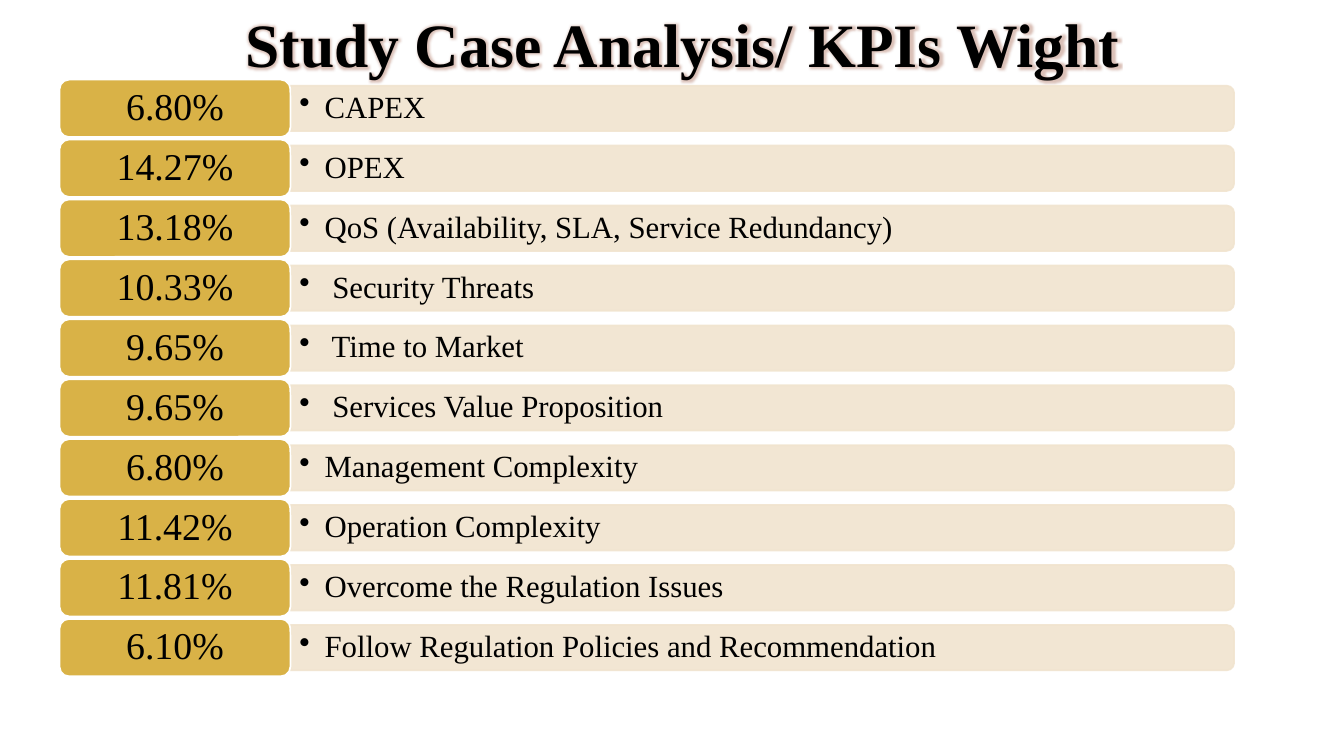
from lxml.etree import SubElement
from pptx import Presentation
from pptx.dml.color import RGBColor
from pptx.enum.shapes import MSO_SHAPE
from pptx.enum.text import MSO_ANCHOR, PP_ALIGN
from pptx.oxml import parse_xml
from pptx.oxml.ns import nsdecls, qn
from pptx.util import Inches, Pt

COLORS = {
    "weight": "D9B247",
    "bar": "F1E4CF",
    "white": "FFFFFF",
    "text": "000000",
    "glow": "A5644E",
}
FONT_NAME = "Times New Roman"
KPIS = [
    ("6.80%", "CAPEX"),
    ("14.27%", "OPEX"),
    ("13.18%", "QoS (Availability, SLA, Service Redundancy)"),
    ("10.33%", " Security Threats"),
    ("9.65%", " Time to Market"),
    ("9.65%", " Services Value Proposition"),
    ("6.80%", "Management Complexity"),
    ("11.42%", "Operation Complexity"),
    ("11.81%", "Overcome the Regulation Issues"),
    ("6.10%", "Follow Regulation Policies and Recommendation"),
]
FIRST_TOP, LAST_TOP = 0.79, 6.14
ROW_PITCH = (LAST_TOP - FIRST_TOP) / (len(KPIS) - 1)
WEIGHT_LEFT, WEIGHT_WIDTH, WEIGHT_HEIGHT = 0.59, 2.29, 0.57
BAR_LEFT, BAR_LENGTH, BAR_THICKNESS = 2.88, 9.36, 0.45


class KpiSlide:
    """Holds the style and the current slide."""

    def __init__(self, slide):
        """Keep the slide that receives the elements."""
        self.slide = slide

    def style_text(self, paragraph, size, bold=False):
        """Set the font of a paragraph."""
        font = paragraph.font
        font.name = FONT_NAME
        font.size = Pt(size)
        font.bold = bold
        font.color.rgb = RGBColor.from_string(COLORS["text"])

    def add_block(self, kind, left, top, width, height, fill, line):
        """Add a filled preset shape without shadow."""
        shape = self.slide.shapes.add_shape(
            kind, Inches(left), Inches(top), Inches(width), Inches(height))
        shape.shadow.inherit = False
        shape.fill.solid()
        shape.fill.fore_color.rgb = RGBColor.from_string(COLORS[fill])
        shape.line.color.rgb = RGBColor.from_string(COLORS[line])
        shape.line.width = Pt(1.25)
        return shape

    def add_bar(self, middle):
        """Add a translucent bar with rounded right corners."""
        shape = self.add_block(
            MSO_SHAPE.ROUND_2_SAME_RECTANGLE,
            BAR_LEFT + (BAR_LENGTH - BAR_THICKNESS) / 2, middle - BAR_LENGTH / 2,
            BAR_THICKNESS, BAR_LENGTH, "bar", "bar")
        shape.rotation = 90
        for color in shape._element.spPr.iter(qn("a:srgbClr")):
            SubElement(color, qn("a:alpha"), val="90000")

    def add_label(self, text, middle):
        """Add the bulleted name of a KPI."""
        height = 0.41
        box = self.slide.shapes.add_textbox(
            Inches(BAR_LEFT), Inches(middle - height / 2), Inches(9.34), Inches(height))
        frame = box.text_frame
        frame.word_wrap = True
        frame.vertical_anchor = MSO_ANCHOR.MIDDLE
        frame.margin_left = frame.margin_right = Inches(0.09)
        paragraph = frame.paragraphs[0]
        paragraph.text = text
        paragraph.level = 1
        paragraph.line_spacing = 0.9
        properties = paragraph._p.get_or_add_pPr()
        properties.set("marL", str(Inches(0.25)))
        properties.set("indent", str(Inches(-0.25)))
        SubElement(properties, qn("a:buChar"), char="•")
        self.style_text(paragraph, 22)

    def add_weight(self, text, top):
        """Add the rounded box with the weight of a KPI."""
        shape = self.add_block(
            MSO_SHAPE.ROUNDED_RECTANGLE, WEIGHT_LEFT, top,
            WEIGHT_WIDTH, WEIGHT_HEIGHT, "weight", "white")
        frame = shape.text_frame
        frame.vertical_anchor = MSO_ANCHOR.MIDDLE
        paragraph = frame.paragraphs[0]
        paragraph.text = text
        paragraph.alignment = PP_ALIGN.CENTER
        paragraph.line_spacing = 0.9
        self.style_text(paragraph, 27)

    def add_title(self, text):
        """Fill the title placeholder and bring it to the front."""
        title = self.slide.shapes.title
        title.left, title.top = Inches(0.11), Inches(0.01)
        title.width, title.height = Inches(13.33), Inches(0.84)
        frame = title.text_frame
        frame.word_wrap = True
        frame.vertical_anchor = MSO_ANCHOR.TOP
        paragraph = frame.paragraphs[0]
        paragraph.text = text
        paragraph.alignment = PP_ALIGN.CENTER
        self.style_text(paragraph, 44, bold=True)
        properties = paragraph.runs[0]._r.get_or_add_rPr()
        properties.append(parse_xml(
            f'<a:ln {nsdecls("a")} w="{Pt(0.75)}"><a:solidFill>'
            f'<a:srgbClr val="{COLORS["white"]}"/></a:solidFill></a:ln>'))
        properties.append(parse_xml(
            f'<a:solidFill {nsdecls("a")}><a:srgbClr val="{COLORS["text"]}"/></a:solidFill>'))
        properties.append(parse_xml(
            f'<a:effectLst {nsdecls("a")}><a:glow rad="{Pt(5)}">'
            f'<a:srgbClr val="{COLORS["glow"]}"><a:alpha val="40000"/></a:srgbClr>'
            '</a:glow></a:effectLst>'))
        self.slide.shapes._spTree.append(title._element)


def main():
    """Build and save the presentation."""
    presentation = Presentation()
    presentation.slide_width = Inches(13.33)
    presentation.slide_height = Inches(7.5)
    kpi_slide = KpiSlide(presentation.slides.add_slide(presentation.slide_layouts[5]))
    for row, (weight, name) in enumerate(KPIS):
        top = FIRST_TOP + row * ROW_PITCH
        middle = top + WEIGHT_HEIGHT / 2
        kpi_slide.add_bar(middle)
        kpi_slide.add_label(name, middle)
        kpi_slide.add_weight(weight, top)
    kpi_slide.add_title("Study Case Analysis/ KPIs Wight")
    presentation.save("out.pptx")


if __name__ == "__main__":
    main()
